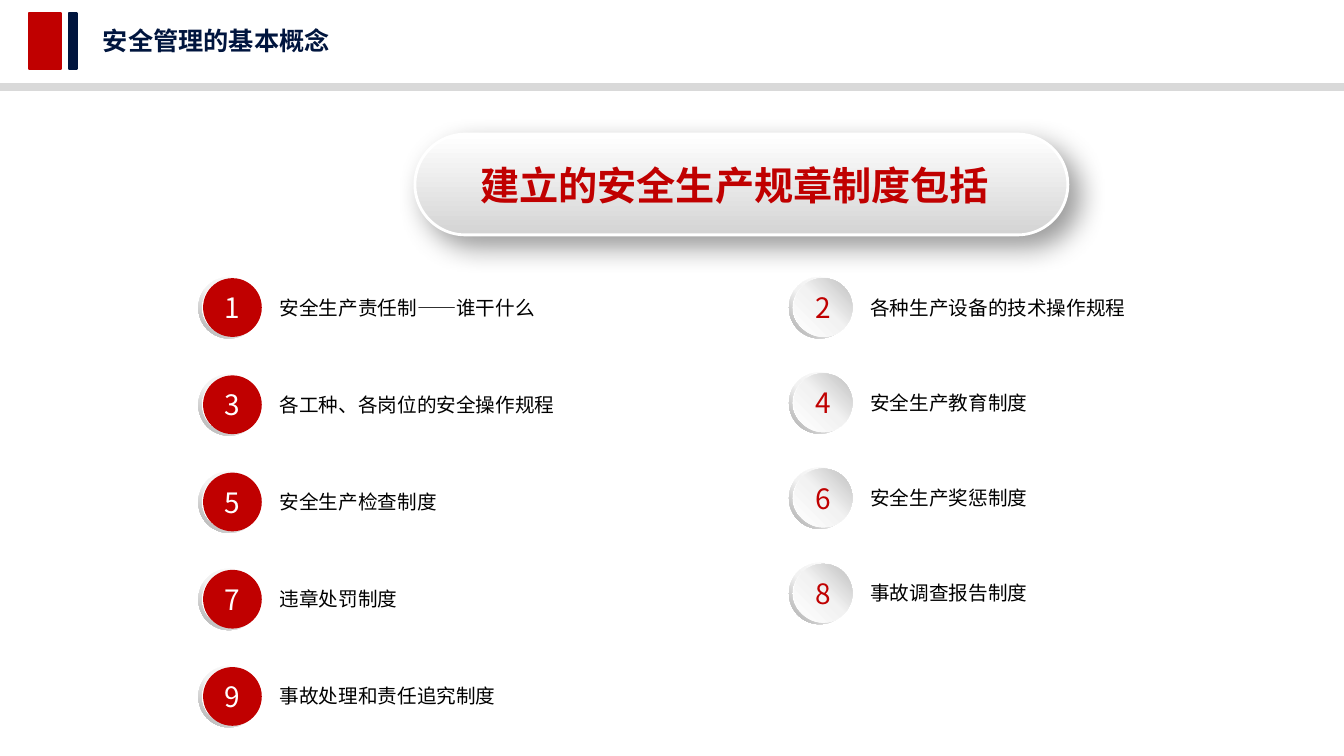
from dataclasses import dataclass

from lxml import etree
from pptx import Presentation
from pptx import util as u
from pptx.dml.color import RGBColor
from pptx.enum import shapes, text
from pptx.oxml import ns, parse_xml

FONT = "Noto Sans CJK SC"
RED, NAVY, GREY, WHITE, BLACK = "C00000", "00153E", "D9D9D9", "FFFFFF", "000000"
PITCH_TOP = 6.98  # top of the first row of numbers, cm


@dataclass(frozen=True)
class Gradient:
    stops: tuple[tuple[int, str], ...]
    angle: int  # clockwise degrees


@dataclass(frozen=True)
class Column:
    left: float
    pitch: float
    text_width: float
    first_number: int
    ball_fill: str | Gradient
    number_color: str
    items: tuple[str, ...]


RIM = Gradient(((0, WHITE), (55, "F2F2F2"), (100, "A6A6A6")), 135)
BALL = Gradient(((0, WHITE), (51, "F2F2F2"), (100, "BFBFBF")), 315)
PILL = Gradient(((0, WHITE), (100, "D4D4D4")), 90)

COLUMNS = (
    Column(19.89, 2.4, 10.64, 2, BALL, RED, (
        "各种生产设备的技术操作规程",
        "安全生产教育制度",
        "安全生产奖惩制度",
        "事故调查报告制度",
    )),
    Column(5, 2.45, 10.82, 1, RED, WHITE, (
        "安全生产责任制——谁干什么",
        "各工种、各岗位的安全操作规程",
        "安全生产检查制度",
        "违章处罚制度",
        "事故处理和责任追究制度",
    )),
)


def rgb(value: str) -> RGBColor:
    return RGBColor.from_string(value)


def fill_shape(sp, fill: str | Gradient) -> None:
    if isinstance(fill, str):
        sp.fill.solid()
        sp.fill.fore_color.rgb = rgb(fill)
        return
    stops = "".join(
        f'<a:gs pos="{pos * 1000}"><a:srgbClr val="{color}"/></a:gs>'
        for pos, color in fill.stops
    )
    gradient = parse_xml(
        f'<a:gradFill {ns.nsdecls("a")} rotWithShape="1"><a:gsLst>{stops}</a:gsLst>'
        f'<a:lin ang="{fill.angle * 60000}" scaled="0"/></a:gradFill>'
    )
    sp._element.spPr.find(ns.qn("a:prstGeom")).addnext(gradient)


def add_shape(parent, kind, left: float, top: float, width: float, height: float,
              fill: str | Gradient, line: str | None = None, line_width: float = 1.5):
    sp = parent.add_shape(kind, u.Cm(left), u.Cm(top), u.Cm(width), u.Cm(height))
    sp.shadow.inherit = False
    fill_shape(sp, fill)
    if line:
        sp.line.color.rgb = rgb(line)
        sp.line.width = u.Pt(line_width)
    else:
        sp.line.fill.background()
    return sp


def write(sp, words: str, size: float, color: str, bold: bool = False,
          align=text.PP_ALIGN.LEFT, anchor=text.MSO_ANCHOR.TOP, wrap: bool = True) -> None:
    tf = sp.text_frame
    tf.word_wrap = wrap
    tf.vertical_anchor = anchor
    p = tf.paragraphs[0]
    p.text = words
    p.alignment = align
    font = p.font
    font.name, font.size, font.bold = FONT, u.Pt(size), bold
    font.color.rgb = rgb(color)
    etree.SubElement(font._element, ns.qn("a:ea")).set("typeface", FONT)


def add_text(parent, left: float, top: float, width: float, height: float,
             words: str, size: float, color: str, bold: bool = False) -> None:
    sp = parent.add_textbox(u.Cm(left), u.Cm(top), u.Cm(width), u.Cm(height))
    write(sp, words, size, color, bold)


def add_header(s) -> None:
    rect = shapes.MSO_SHAPE.RECTANGLE
    add_shape(s.shapes, rect, 0.74, 0.33, 0.79, 1.4, RED, RED)
    add_shape(s.shapes, rect, 1.73, 0.33, 0.2, 1.4, NAVY, NAVY)
    add_shape(s.shapes, rect, 0, 2.13, 33.88, 0.13, GREY, GREY)
    title = s.shapes.title
    title.left, title.top = u.Cm(2.34), u.Cm(0.51)
    title.width, title.height = u.Cm(6.27), u.Cm(1.02)
    write(title, "安全管理的基本概念", 18, NAVY, bold=True, wrap=False)


def add_item(s, column: Column, row: int) -> None:
    group = s.shapes.add_group_shape().shapes
    left, top = column.left, PITCH_TOP + row * column.pitch
    add_text(group, left + 1.8, top + 0.34, column.text_width, 0.86,
             column.items[row], 14, BLACK)
    rim = add_shape(group, shapes.MSO_SHAPE.DONUT, left, top, 1.55, 1.55, RIM)
    rim.adjustments[0] = 0.049
    ball = add_shape(group, shapes.MSO_SHAPE.OVAL, left + 0.12, top + 0.03, 1.48, 1.48,
                     column.ball_fill)
    write(ball, str(column.first_number + 2 * row), 20, column.number_color,
          align=text.PP_ALIGN.CENTER, anchor=text.MSO_ANCHOR.MIDDLE)


def add_banner(s) -> None:
    group = s.shapes.add_group_shape().shapes
    pill = add_shape(group, shapes.MSO_SHAPE.ROUNDED_RECTANGLE, 10.46, 3.38, 16.46, 2.54,
                     PILL, WHITE, 2)
    pill.adjustments[0] = 0.5
    effects = pill._element.spPr.find(ns.qn("a:effectLst"))
    effects.append(parse_xml(
        f'<a:outerShdw {ns.nsdecls("a")} blurRad="{u.Pt(20)}" dist="{u.Pt(10)}" '
        f'dir="{45 * 60000}" algn="tl" rotWithShape="0"><a:srgbClr val="{BLACK}">'
        '<a:alpha val="40000"/></a:srgbClr></a:outerShdw>'
    ))
    add_text(group, 11.86, 3.94, 13.69, 1.45, "建立的安全生产规章制度包括", 28, RED, bold=True)


def main() -> None:
    prs = Presentation()
    prs.slide_width, prs.slide_height = u.Cm(33.88), u.Cm(19.05)
    s = prs.slides.add_slide(prs.slide_layouts[5])
    add_header(s)
    # Numbered rules, odd numbers on the left and even ones on the right
    for column in COLUMNS:
        for row in range(len(column.items)):
            add_item(s, column, row)
    add_banner(s)
    prs.save("out.pptx")


if __name__ == "__main__":
    main()
